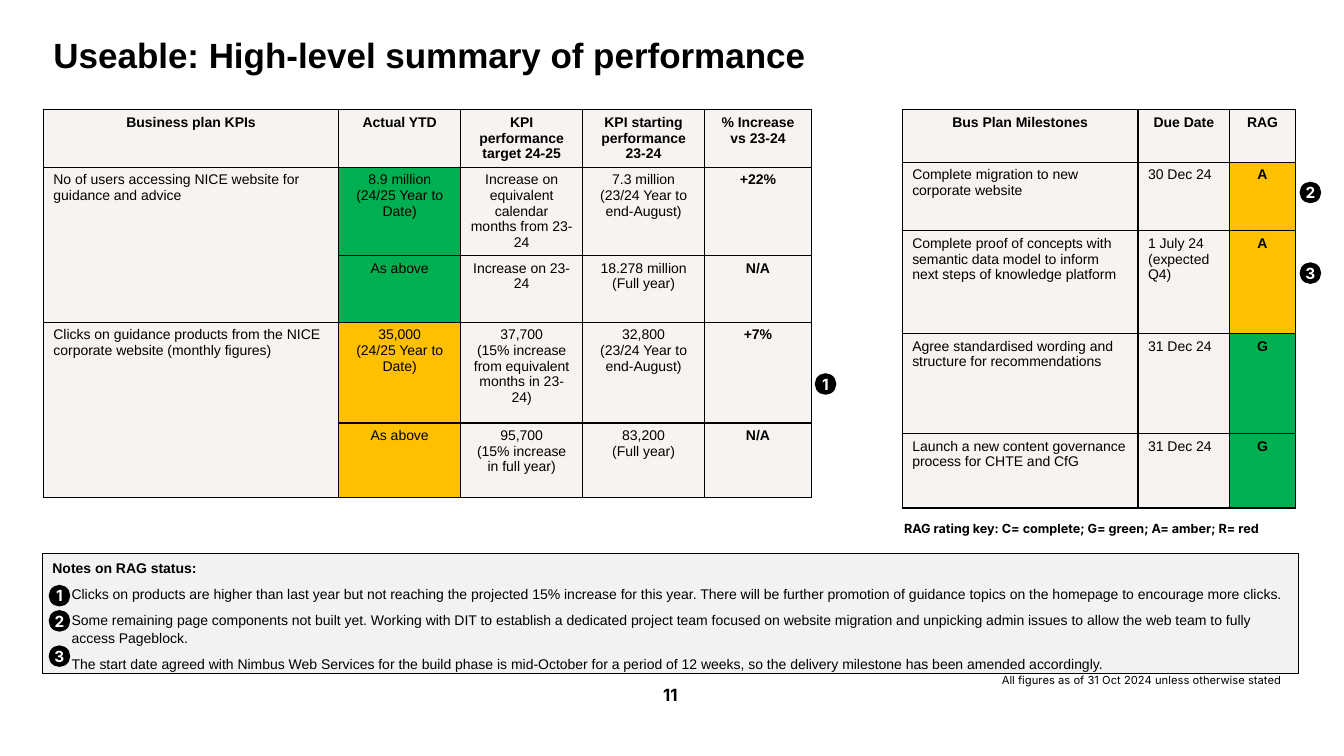
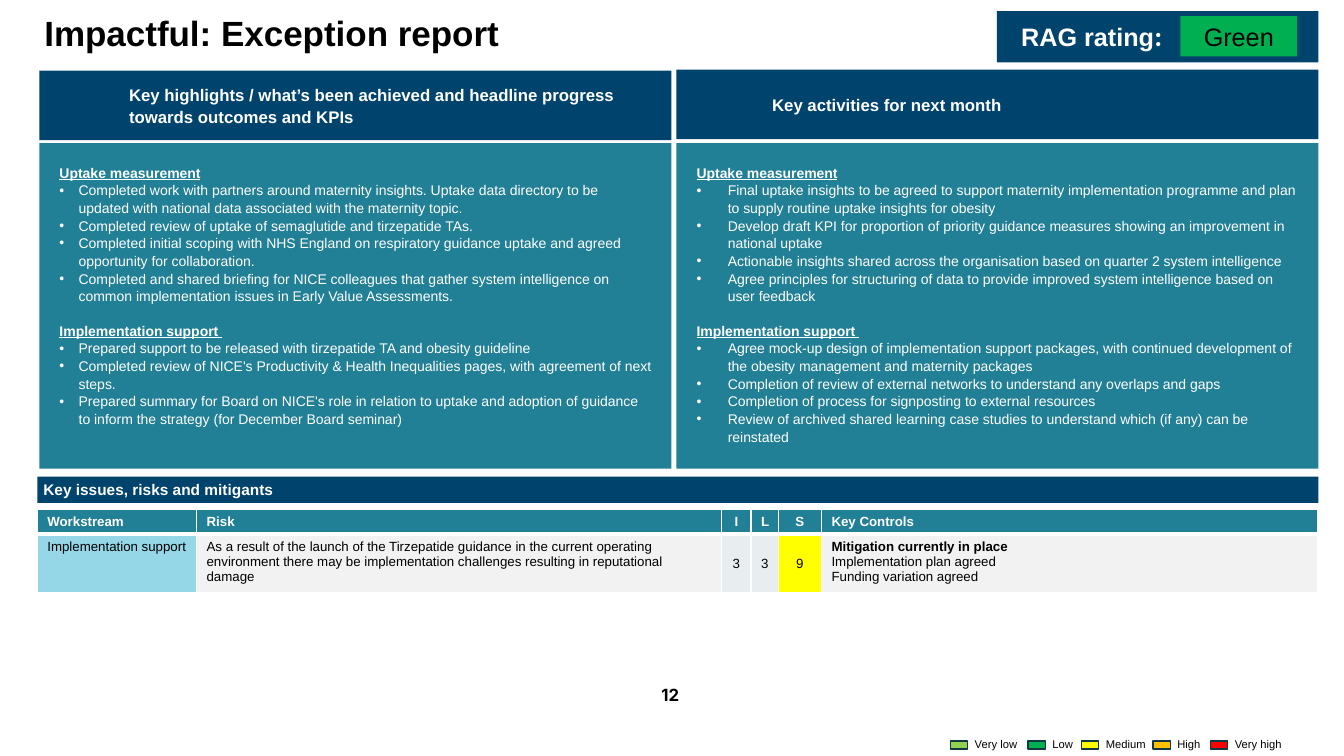
from dataclasses import dataclass, replace

from lxml.etree import SubElement
from pptx import Presentation
from pptx.dml.color import RGBColor
from pptx.enum.shapes import MSO_SHAPE as Shape
from pptx.enum.text import MSO_ANCHOR as Anchor, MSO_AUTO_SIZE as AutoSize, PP_ALIGN as Align
from pptx.oxml.ns import qn
from pptx.util import Inches, Pt


@dataclass(frozen=True)
class Theme:
    black: str = "000000"
    white: str = "FFFFFF"
    navy: str = "00436C"
    teal: str = "228096"
    sky: str = "95D7E7"
    mist: str = "E8EDEF"
    cream: str = "F7F3F1"
    grey: str = "F2F2F2"
    outline: str = "0F3842"
    light_green: str = "92D050"
    green: str = "00B050"
    yellow: str = "FFFF00"
    amber: str = "FFC000"
    red: str = "FF0000"
    sans: str = "Arial"
    accent: str = "Inter"
    title: float = 25
    rating: float = 18
    heading: float = 12
    band: float = 11
    body: float = 10
    risk: float = 9.5
    key: float = 9
    small: float = 8


theme = Theme()


@dataclass(frozen=True)
class Style:
    size: float = theme.body
    color: str = theme.black
    bold: bool = False
    underline: bool = False
    font: str = theme.sans
    align: Align = Align.LEFT
    line: float = 1
    before: float = 0
    after: float = 0
    margin: float = 0
    bullet: str = ""


@dataclass(frozen=True)
class Cell:
    text: str
    fill: str = theme.cream
    style: Style = Style()
    anchor: Anchor = Anchor.TOP
    lead: bool = False


CENTRE = Style(align=Align.CENTER)
CENTRE_BOLD = replace(CENTRE, bold=True)
HEADING = Style(theme.heading, theme.white, True, line=1.05)
PANEL = Style(color=theme.white, line=1.05)
PANEL_HEADING = replace(PANEL, bold=True, underline=True)
NOTE = Style(line=1.05, after=6)
RISK = Style(theme.risk)
RISK_HEADING = replace(RISK, color=theme.white, bold=True)
RATING = Style(theme.rating, theme.white, True)
BADGE = Style(theme.band, theme.white, True, font=theme.accent, align=Align.CENTER)
PAGE = Style(theme.heading, bold=True, font=theme.accent, align=Align.CENTER)

GRID = Inches(0.1)
COLUMNS, ROWS = 133.33, 75
DEFAULT_INSETS = (1, 0.5, 1, 0.5)
NO_INSETS = (0, 0, 0, 0)


def grid(value):
    return round(value * GRID)


def colour(value):
    return RGBColor.from_string(value)


class Deck:
    def __init__(self):
        self.presentation = Presentation()
        self.presentation.slide_width = grid(COLUMNS)
        self.presentation.slide_height = grid(ROWS)
        self.slide = None

    def start(self, layout, title, box, number):
        self.slide = self.presentation.slides.add_slide(self.presentation.slide_layouts[layout])
        shape = self.place(self.slide.shapes.title, box)
        self.set_text(shape, [(title, Style(theme.title, bold=True, line=0.9))])
        self.text((51.5, 67.4, 30, 4), [(number, PAGE)])

    def place(self, shape, box):
        shape.left, shape.top, shape.width, shape.height = map(grid, box)
        return shape

    def paint(self, shape, fill, line=None, width=1):
        shape.fill.solid()
        shape.fill.fore_color.rgb = colour(fill)
        if line:
            shape.line.color.rgb = colour(line)
            shape.line.width = Pt(width)
        else:
            shape.line.fill.background()

    def set_text(self, shape, lines, insets=DEFAULT_INSETS, anchor=Anchor.TOP, wrap=True):
        frame = shape.text_frame
        frame.auto_size = AutoSize.NONE
        frame.word_wrap = wrap
        frame.vertical_anchor = anchor
        frame.margin_left, frame.margin_top, frame.margin_right, frame.margin_bottom = map(grid, insets)
        self.fill_frame(frame, lines)

    def fill_frame(self, frame, lines):
        for index, (text, style) in enumerate(lines):
            paragraph = frame.add_paragraph() if index else frame.paragraphs[0]
            properties = paragraph._p.get_or_add_pPr()
            properties.set("marL", str(grid(style.margin)))
            properties.set("indent", str(-grid(style.margin) if style.bullet else 0))
            if style.bullet:
                SubElement(properties, qn("a:buChar")).set("char", style.bullet)
            else:
                SubElement(properties, qn("a:buNone"))
            paragraph.alignment = style.align
            paragraph.line_spacing = style.line
            paragraph.space_before = Pt(style.before)
            paragraph.space_after = Pt(style.after)
            self.add_run(paragraph, text, style)

    def add_run(self, paragraph, text, style):
        run = paragraph.add_run()
        run.text = text
        run.font.name = style.font
        run.font.size = Pt(style.size)
        run.font.bold = style.bold
        run.font.underline = style.underline
        run.font.color.rgb = colour(style.color)

    def text(self, box, lines, **options):
        shape = self.slide.shapes.add_textbox(*map(grid, box))
        self.set_text(shape, lines, **options)

    def block(self, box, fill, lines=(), line=None, kind=Shape.RECTANGLE, **options):
        shape = self.slide.shapes.add_shape(kind, *map(grid, box))
        shape.shadow.inherit = False
        self.paint(shape, fill, line)
        self.set_text(shape, lines, anchor=Anchor.MIDDLE, **options)
        return shape

    def body(self, index, box, fill, lines, line=None, insets=DEFAULT_INSETS):
        shape = self.place(self.slide.placeholders[index], box)
        self.paint(shape, fill, line, 0.75)
        self.set_text(shape, lines, insets)

    def badge(self, left, top, number):
        self.block((left, top, 2, 2), theme.black, [(number, BADGE)], theme.black,
                   Shape.OVAL, insets=NO_INSETS, wrap=False)

    def table(self, left, top, widths, heights, rows, border, header_rule=1):
        frame = self.slide.shapes.add_table(len(heights), len(widths), *map(
            grid, (left, top, sum(widths), sum(heights))))
        table = frame.table
        table.first_row = table.horz_banding = False
        for column, width in zip(table.columns, widths):
            column.width = grid(width)
        for row, height in zip(table.rows, heights):
            row.height = grid(height)
        for row_index, cells in enumerate(rows):
            for column_index, content in enumerate(cells):
                cell = table.cell(row_index, column_index)
                self.border(cell, border, 1 if row_index else header_rule)
                cell.fill.solid()
                cell.fill.fore_color.rgb = colour(content.fill)
                cell.vertical_anchor = content.anchor
                if content.text:
                    self.fill_frame(cell.text_frame, [
                        (text, replace(content.style, bold=True) if content.lead and not index else content.style)
                        for index, text in enumerate(content.text.split("\n"))])
        return table

    def border(self, cell, line_colour, bottom):
        properties = cell._tc.get_or_add_tcPr()
        for side, width in zip("LRTB", (1, 1, 1, bottom)):
            line = SubElement(properties, qn(f"a:ln{side}"))
            line.set("w", str(Pt(width)))
            fill = SubElement(line, qn("a:solidFill"))
            SubElement(fill, qn("a:srgbClr")).set("val", line_colour)


def panel_lines(margin, groups):
    bullet = replace(PANEL, margin=margin, bullet="•")
    lines = []
    for heading, items in groups:
        lines.append((heading, replace(PANEL_HEADING, before=12 if lines else 0)))
        lines += [(item, bullet) for item in items]
    return lines


def summary_slide(deck):
    deck.start(1, "Useable: High-level summary of performance", (4.3, 3.3, 121.1, 6.6), "11")

    kpi_headings = ("Business plan KPIs", "Actual YTD", "KPI performance target 24-25",
                    "KPI starting performance 23-24", "% Increase vs 23-24")
    kpis = (
        ("No of users accessing NICE website for guidance and advice", "8.9 million\n(24/25 Year to Date)",
         theme.green, "Increase on equivalent calendar months from 23-24",
         "7.3 million\n(23/24 Year to end-August)", "+22%"),
        ("", "As above", theme.green, "Increase on 23-24", "18.278 million\n(Full year)", "N/A"),
        ("Clicks on guidance products from the NICE corporate website (monthly figures)",
         "35,000\n(24/25 Year to Date)", theme.amber,
         "37,700\n(15% increase from equivalent months in 23-24)",
         "32,800\n(23/24 Year to end-August)", "+7%"),
        ("", "As above", theme.amber, "95,700\n(15% increase in full year)", "83,200\n(Full year)", "N/A"),
    )
    rows = [[Cell(text, style=CENTRE_BOLD) for text in kpi_headings]]
    for name, actual, rag, target, start, increase in kpis:
        rows.append([Cell(name), Cell(actual, rag, CENTRE), Cell(target, style=CENTRE),
                     Cell(start, style=CENTRE), Cell(increase, style=CENTRE_BOLD)])
    table = deck.table(4.3, 10.9, (29.3, 12.1, 12.1, 12.1, 10.6), (5.7, 8.7, 6.6, 10, 7.4), rows, theme.black)
    for first in (1, 3):
        table.cell(first, 0).merge(table.cell(first + 1, 0))

    milestones = (
        ("Complete migration to new corporate website", "30 Dec 24", "A"),
        ("Complete proof of concepts with semantic data model to inform next steps of knowledge platform",
         "1 July 24 (expected Q4)", "A"),
        ("Agree standardised wording and structure for recommendations", "31 Dec 24", "G"),
        ("Launch a new content governance process for CHTE and CfG", "31 Dec 24", "G"),
    )
    rag_fills = {"A": theme.amber, "G": theme.green}
    rows = [[Cell(text, style=CENTRE_BOLD) for text in ("Bus Plan Milestones", "Due Date", "RAG")]]
    rows += [[Cell(name), Cell(due), Cell(rag, rag_fills[rag], CENTRE_BOLD)] for name, due, rag in milestones]
    deck.table(89.5, 10.9, (23.4, 9.1, 6.5), (5.2, 6.8, 10.2, 9.9, 7.4), rows, theme.black)

    deck.text((88.7, 51.2, 40.2, 2.5), [("RAG rating key: C= complete; G= green; A= amber; R= red",
                                       Style(theme.key, bold=True, font=theme.accent))])
    notes = (
        "Clicks on products are higher than last year but not reaching the projected 15% increase for this year. "
        "There will be further promotion of guidance topics on the homepage to encourage more clicks.",
        "Some remaining page components not built yet. Working with DIT to establish a dedicated project team "
        "focused on website migration and unpicking admin issues to allow the web team to fully access Pageblock.",
        "The start date agreed with Nimbus Web Services for the build phase is mid-October for a period of "
        "12 weeks, so the delivery milestone has been amended accordingly.",
    )
    note_lines = [("Notes on RAG status:", replace(NOTE, bold=True))]
    note_lines += [(note, replace(NOTE, margin=1.9)) for note in notes]
    deck.body(1, (4.2, 54.9, 124.6, 11.9), theme.grey, note_lines, theme.black)
    deck.text((98.4, 66.3, 32.7, 2.4), [("All figures as of 31 Oct 2024 unless otherwise stated",
                                       Style(theme.small, font=theme.accent))])
    for left, top, number in ((80.9, 37.1, "1"), (129, 18.1, "2"), (129, 26.1, "3"),
                              (4.9, 58.1, "1"), (4.9, 60.6, "2"), (4.9, 64.1, "3")):
        deck.badge(left, top, number)


def exception_slide(deck):
    deck.start(3, "Impactful: Exception report", (3.4, 1.1, 122.5, 8.2), "12")
    rating = deck.block((98.9, 1.1, 31.9, 5.1), theme.navy, [("RAG rating", RATING)], insets=(2.4, 0.5, 1, 0.5))
    deck.add_run(rating.text_frame.paragraphs[0], ":", replace(RATING, font=theme.accent))
    deck.block((117.1, 1.6, 11.6, 4), theme.green, [("Green", replace(CENTRE, size=theme.rating))])

    achieved = (
        ("Uptake measurement", (
            "Completed work with partners around maternity insights. Uptake data directory to be updated with "
            "national data associated with the maternity topic.",
            "Completed review of uptake of semaglutide and tirzepatide TAs.",
            "Completed initial scoping with NHS England on respiratory guidance uptake and agreed opportunity "
            "for collaboration.",
            "Completed and shared briefing for NICE colleagues that gather system intelligence on common "
            "implementation issues in Early Value Assessments.")),
        ("Implementation support ", (
            "Prepared support to be released with tirzepatide TA and obesity guideline",
            "Completed review of NICE's Productivity & Health Inequalities pages, with agreement of next steps.",
            "Prepared summary for Board on NICE's role in relation to uptake and adoption of guidance to inform "
            "the strategy (for December Board seminar)")),
    )
    planned = (
        ("Uptake measurement", (
            "Final uptake insights to be agreed to support maternity implementation programme and plan to supply "
            "routine uptake insights for obesity",
            "Develop draft KPI for proportion of priority guidance measures showing an improvement "
            "in national uptake",
            "Actionable insights shared across the organisation based on quarter 2 system intelligence",
            "Agree principles for structuring of data to provide improved system intelligence based on "
            "user feedback")),
        ("Implementation support ", (
            "Agree mock-up design of implementation support packages, with continued development of the obesity "
            "management and maternity packages",
            "Completion of review of external networks to understand any overlaps and gaps",
            "Completion of process for signposting to external resources",
            "Review of archived shared learning case studies to understand which (if any) can be reinstated")),
    )
    panels = (
        (1, 3.9, 62.7, 7, 8.9, 1.9, "Key highlights / what’s been achieved and headline progress "
         "towards outcomes and KPIs", achieved),
        (2, 67.1, 63.7, 6.9, 9.5, 3.1, "Key activities for next month", planned),
    )
    for index, left, width, top, inset, margin, heading, groups in panels:
        deck.block((left, top, width, 6.9), theme.navy, [(heading, HEADING)], insets=(inset, 0, 1, 0))
        deck.body(index, (left, 14.2, width, 32.3), theme.teal, panel_lines(margin, groups), insets=(2, 2, 2, 2))

    deck.block((3.7, 47.3, 127.1, 2.6), theme.navy,
               [("Key issues, risks and mitigants", replace(HEADING, size=theme.band, line=1))],
               insets=(0.6, 0, 0, 0))
    risk_centre = replace(RISK, align=Align.CENTER)
    headings = [Cell(text, theme.teal, replace(RISK_HEADING, align=Align.CENTER if len(text) == 1 else Align.LEFT))
                for text in ("Workstream", "Risk", "I", "L", "S", "Key Controls")]
    scores = [Cell(score, fill, risk_centre, Anchor.MIDDLE)
              for score, fill in (("3", theme.mist), ("3", theme.mist), ("9", theme.yellow))]
    risk = [Cell("Implementation support", theme.sky, RISK),
            Cell("As a result of the launch of the Tirzepatide guidance in the current operating environment there "
                 "may be implementation challenges resulting in reputational damage", theme.grey, RISK),
            *scores,
            Cell("Mitigation currently in place\nImplementation plan agreed\nFunding variation agreed",
                 theme.grey, RISK, lead=True)]
    deck.table(3.7, 50.5, (15.8, 52.1, 2.9, 2.7, 4.3, 49.2), (2.5, 5.8), [headings, risk], theme.white, 3)

    for left, fill, label in ((94.3, theme.light_green, "Very low"), (102, theme.green, "Low"),
                              (107.3, theme.yellow, "Medium"), (114.4, theme.amber, "High"),
                              (120.1, theme.red, "Very high")):
        deck.block((left, 73.5, 1.7, 0.8), fill, line=theme.outline)
        deck.text((left + 2.4, 72.7, 6, 2.3), [(label, Style(theme.small))], insets=NO_INSETS, anchor=Anchor.MIDDLE)


def main():
    deck = Deck()
    summary_slide(deck)
    exception_slide(deck)
    deck.presentation.save("out.pptx")


if __name__ == "__main__":
    main()
